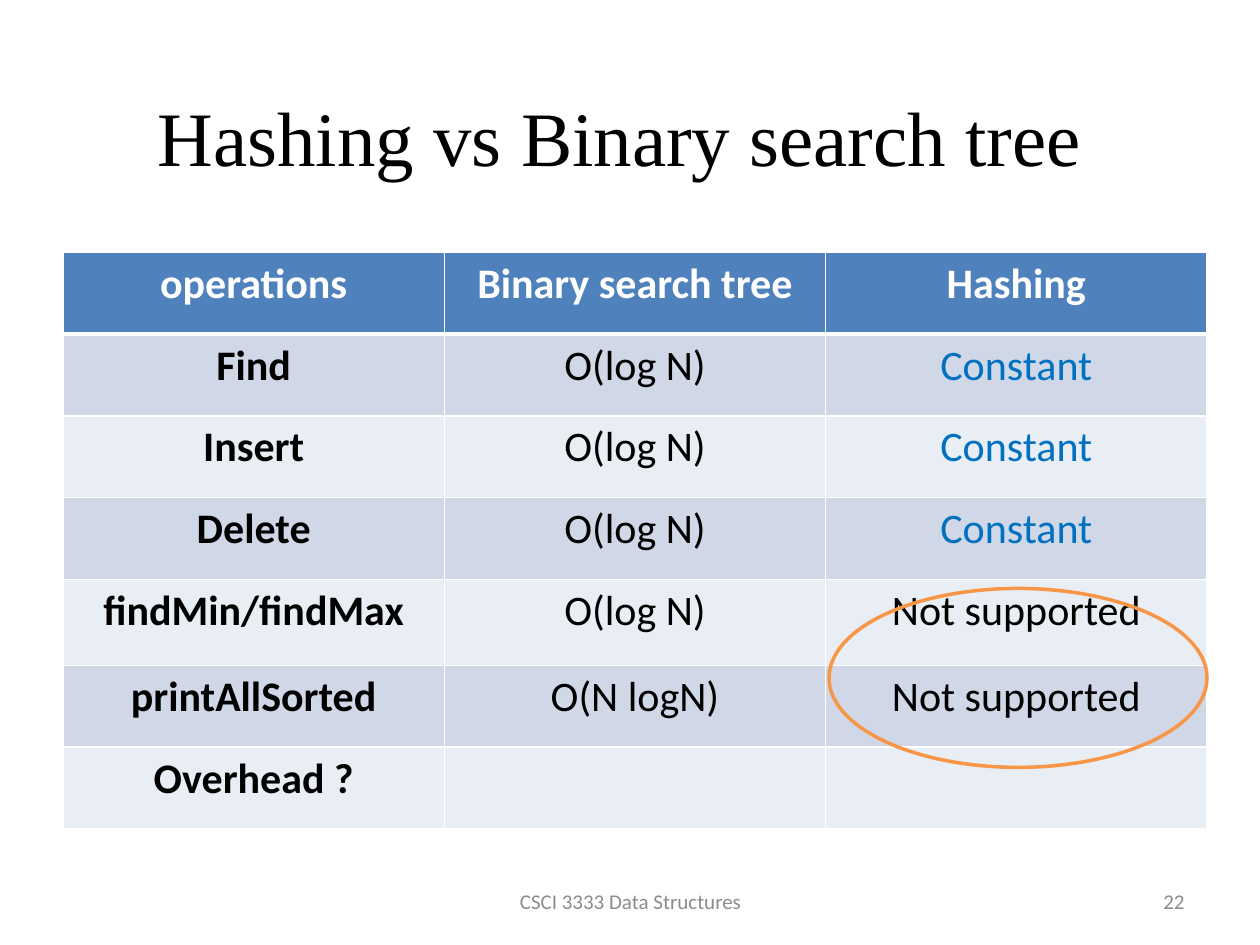
"""Build a slide comparing the costs of hashing and binary search trees."""

from dataclasses import dataclass

import pptx
import pptx.dml.color
import pptx.enum.shapes
import pptx.enum.text
import pptx.oxml
import pptx.oxml.ns
import pptx.slide
import pptx.table
import pptx.text.text
import pptx.util

EMU_PER_PX = 9144
ALIGN = pptx.enum.text.PP_ALIGN
MIDDLE = pptx.enum.text.MSO_ANCHOR.MIDDLE


@dataclass(frozen=True)
class Theme:
    heading_font: str = "Times New Roman"
    body_font: str = "Calibri"
    title_size: int = 44
    table_size: int = 24
    footer_size: int = 12
    black: str = "000000"
    white: str = "FFFFFF"
    grey: str = "8C8C8C"
    blue: str = "0070C0"
    orange: str = "F79646"
    header_fill: str = "4F81BD"
    bands: tuple[str, str] = ("D0D8E8", "E9EDF4")


@dataclass(frozen=True)
class Box:
    left: int
    top: int
    width: int
    height: int

    def emu(self) -> tuple[int, int, int, int]:
        return px(self.left), px(self.top), px(self.width), px(self.height)


@dataclass(frozen=True)
class Operation:
    name: str
    tree: str = ""
    hashing: str = ""
    height: int = 65


@dataclass(frozen=True)
class Footer:
    text: str
    box: Box
    alignment: ALIGN


THEME = Theme()
HEADER = Operation("operations", "Binary search tree", "Hashing")
OPERATIONS = [
    Operation("Find", "O(log N)", "Constant"),
    Operation("Insert", "O(log N)", "Constant"),
    Operation("Delete", "O(log N)", "Constant"),
    Operation("findMin/findMax", "O(log N)", "Not supported", 68),
    Operation("printAllSorted", "O(N logN)", "Not supported"),
    Operation("Overhead ?"),
]
FOOTERS = [
    Footer("CSCI 3333 Data Structures", Box(342, 695, 317, 40), ALIGN.CENTER),
    Footer("22", Box(717, 695, 233, 40), ALIGN.RIGHT),
]


def px(length: int) -> int:
    return pptx.util.Emu(length * EMU_PER_PX)


def rgb(color: str) -> pptx.dml.color.RGBColor:
    return pptx.dml.color.RGBColor.from_string(color)


def write(frame: pptx.text.text.TextFrame, text: str, size: int, color: str,
          font: str = THEME.body_font, bold: bool = False,
          alignment: ALIGN = ALIGN.CENTER) -> None:
    frame.text = text
    paragraph = frame.paragraphs[0]
    paragraph.alignment = alignment
    paragraph.font.name = font
    paragraph.font.size = pptx.util.Pt(size)
    paragraph.font.bold = bold
    paragraph.font.color.rgb = rgb(color)


def add_border(cell: pptx.table._Cell, side: str, points: int) -> None:
    cell._tc.get_or_add_tcPr().append(pptx.oxml.parse_xml(
        f'<a:ln{side} {pptx.oxml.ns.nsdecls("a")} w="{pptx.util.Pt(points)}">'
        f'<a:solidFill><a:srgbClr val="{THEME.white}"/></a:solidFill></a:ln{side}>'))


def fill_cell(cell: pptx.table._Cell, text: str, row: int, column: int) -> None:
    is_header = row == 0
    color = THEME.white if is_header else THEME.blue if text == "Constant" else THEME.black
    write(cell.text_frame, text, THEME.table_size, color, bold=is_header or column == 0)
    for side in "LRTB":
        under_header = (row, side) in ((0, "B"), (1, "T"))
        add_border(cell, side, 3 if under_header else 1)
    cell.fill.solid()
    cell.fill.fore_color.rgb = rgb(THEME.header_fill if is_header else THEME.bands[(row - 1) % 2])


def add_title(slide: pptx.slide.Slide, text: str, box: Box) -> None:
    title = slide.shapes.title
    title.left, title.top, title.width, title.height = box.emu()
    title.text_frame.vertical_anchor = MIDDLE
    write(title.text_frame, text, THEME.title_size, THEME.black, THEME.heading_font)


def add_comparison(slide: pptx.slide.Slide, operations: list[Operation], box: Box) -> None:
    table = slide.shapes.add_table(len(operations), 3, *box.emu()).table
    for row, operation in enumerate(operations):
        table.rows[row].height = px(operation.height)
        for column, text in enumerate((operation.name, operation.tree, operation.hashing)):
            fill_cell(table.cell(row, column), text, row, column)


def add_highlight(slide: pptx.slide.Slide, box: Box) -> None:
    ellipse = slide.shapes.add_shape(pptx.enum.shapes.MSO_SHAPE.OVAL, *box.emu())
    ellipse.shadow.inherit = False
    ellipse.fill.background()
    ellipse.line.color.rgb = rgb(THEME.orange)
    ellipse.line.width = pptx.util.Pt(2)


def add_footer(slide: pptx.slide.Slide, footer: Footer) -> None:
    frame = slide.shapes.add_textbox(*footer.box.emu()).text_frame
    frame.word_wrap = True
    frame.vertical_anchor = MIDDLE
    write(frame, footer.text, THEME.footer_size, THEME.grey, alignment=footer.alignment)


def main() -> None:
    presentation = pptx.Presentation()
    presentation.slide_width, presentation.slide_height = px(1000), px(750)
    slide = presentation.slides.add_slide(presentation.slide_layouts[5])
    add_title(slide, "Hashing vs Binary search tree", Box(42, 58, 900, 100))
    for footer in FOOTERS:
        add_footer(slide, footer)
    add_comparison(slide, [HEADER, *OPERATIONS], Box(50, 200, 908, 458))
    add_highlight(slide, Box(658, 467, 300, 142))
    presentation.save("out.pptx")


if __name__ == "__main__":
    main()
